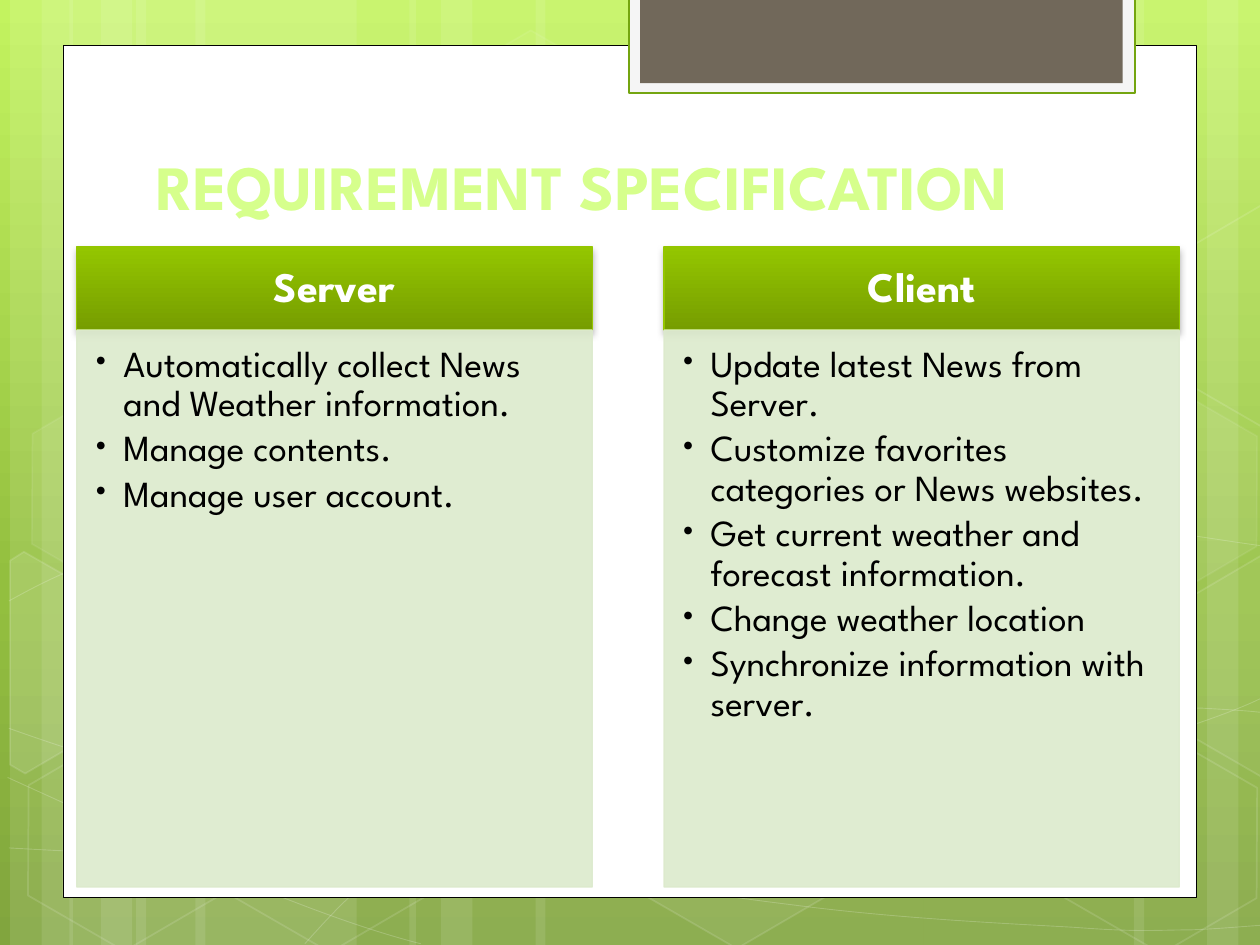
from typing import NamedTuple

from lxml import etree
from pptx import Presentation
from pptx.dml.color import RGBColor
from pptx.enum.shapes import MSO_SHAPE
from pptx.enum.text import MSO_ANCHOR, PP_ALIGN
from pptx.oxml.ns import qn
from pptx.util import Inches, Pt

RECTANGLE, HEXAGON = MSO_SHAPE.RECTANGLE, MSO_SHAPE.HEXAGON
TOP, MIDDLE = MSO_ANCHOR.TOP, MSO_ANCHOR.MIDDLE
LEFT, CENTER = PP_ALIGN.LEFT, PP_ALIGN.CENTER
FONT = "League Spartan"
WHITE, BLACK, GREEN = "FFFFFF", "000000", "94C600"
HEX_SIZE = (1.75, 1.52)


class Stroke(NamedTuple):
    color: str
    width: float
    opacity: int = 100


class Hexagon(NamedTuple):
    left: float
    top: float
    fill_opacity: int
    line_opacity: int


class Column(NamedTuple):
    left: float
    heading: str
    items: list[str]


# Background stripes: left, width
STRIPES = [(1.08, 1.75), (0.08, 0.5), (0.33, 0.83), (1.55, 1.75), (0.55, 0.5), (0.8, 0.83),
           (7.33, 1.75), (9.58, 0.5), (9, 0.83), (4.25, 3.08), (3.25, 0.5), (3.5, 0.83)]

# Background curves: a start point, then three points for each Bezier segment
CURVES = [
    [(0.07, 6.73), (0.61, 6.76), (1.15, 6.79), (1.9, 6.78), (2.65, 6.77), (3.58, 6.75),
     (4.58, 6.65), (5.58, 6.55), (7, 6.36), (7.92, 6.17), (8.83, 5.98), (9.77, 5.68),
     (10.07, 5.51)],
    [(0.07, 4.77), (0.36, 4.61), (0.65, 4.46), (1.21, 4.31), (1.78, 4.16), (2.59, 3.94),
     (3.47, 3.87), (4.36, 3.8), (5.44, 3.79), (6.54, 3.87), (7.64, 3.95), (9.47, 4.26),
     (10.07, 4.34)],
    [(0.06, 6.17), (1.27, 6.72), (2.47, 7.27), (3.34, 7.49)],
    [(0.07, 5.78), (0.38, 5.89), (0.7, 6), (1.28, 6.16), (1.86, 6.31), (2.73, 6.56),
     (3.57, 6.73), (4.4, 6.9), (5.45, 7.08), (6.28, 7.18), (7.11, 7.29), (8, 7.33),
     (8.53, 7.36), (9.05, 7.4), (9.19, 7.38), (9.45, 7.38), (9.71, 7.37), (9.89, 7.35),
     (10.07, 7.34)],
    [(2.42, 7.49), (2.6, 7.29), (2.78, 7.09), (3.02, 6.91), (3.26, 6.73), (3.6, 6.53),
     (3.88, 6.39), (4.16, 6.25), (4.33, 6.19), (4.7, 6.09), (5.06, 5.99), (5.73, 5.85),
     (6.08, 5.78), (6.44, 5.71), (6.49, 5.71), (6.8, 5.69), (7.11, 5.66), (7.6, 5.63),
     (7.94, 5.62), (8.29, 5.61), (8.86, 5.62), (8.86, 5.62), (9.08, 5.62), (9.31, 5.62),
     (9.53, 5.62), (9.71, 5.63), (9.88, 5.64), (9.97, 5.65), (10.06, 5.66), (10.03, 5.65),
     (10.06, 5.66)],
]

HEXAGONS = [Hexagon(3.34, 0.36, 4, 8), Hexagon(4.97, 5.89, 6, 12), Hexagon(0.11, 5.91, 0, 12),
            Hexagon(0.14, 3.12, 7, 8), Hexagon(1.74, 5.92, 0, 12), Hexagon(8.34, 5.93, 0, 12),
            Hexagon(8.34, 3.14, 7, 8)]

# Hexagons cut by the slide edge: corners, fill opacity
CUT_HEXAGONS = [
    ([(0.08, 4.45), (0.19, 4.38), (0.96, 4.82), (0.95, 5.7), (0.2, 6.14), (0.08, 6.07)], 10),
    ([(9.26, 4.85), (10.01, 4.41), (10.09, 4.46), (10.09, 6.13), (10.02, 6.17), (9.26, 5.73)], 4),
    ([(9.26, 2.07), (10.01, 1.63), (10.1, 1.68), (10.09, 3.35), (10.02, 3.39), (9.26, 2.95)], 0),
]

COLUMNS = [
    Column(0.61, "Server", ["Automatically collect News and Weather information.",
                            "Manage contents.", "Manage user account."]),
    Column(5.27, "Client", ["Update latest News from Server.",
                            "Customize favorites categories or News websites.",
                            "Get current weather and forecast information.",
                            "Change weather location",
                            "Synchronize information with server."]),
]


def rgb(color: str) -> RGBColor:
    return RGBColor.from_string(color)


def add_xml(parent, tag: str, **attributes):
    return etree.SubElement(parent, qn(tag), {k: str(v) for k, v in attributes.items()})


def set_opacity(properties, percent: int) -> None:
    if percent < 100:
        color = properties.find(qn("a:solidFill")).find(qn("a:srgbClr"))
        add_xml(color, "a:alpha", val=percent * 1000)


def style(shape, fill: str = "", opacity: int = 100, stroke: Stroke | None = None) -> None:
    shape.shadow.inherit = False
    properties = shape._element.spPr
    if fill and opacity:
        shape.fill.solid()
        shape.fill.fore_color.rgb = rgb(fill)
        set_opacity(properties, opacity)
    else:
        shape.fill.background()
    if stroke:
        shape.line.color.rgb = rgb(stroke.color)
        shape.line.width = Pt(stroke.width)
        set_opacity(properties.find(qn("a:ln")), stroke.opacity)
    else:
        shape.line.fill.background()


def set_gradient(fill, owner, stops: list[tuple[int, str]]) -> None:
    """Fill from top to bottom with stops of (percent, colour)."""
    fill.gradient()
    fill.gradient_angle = 270
    stop_list = next(owner.iter(qn("a:gsLst")))
    for old_stop in list(stop_list):
        stop_list.remove(old_stop)
    for percent, color in stops:
        add_xml(add_xml(stop_list, "a:gs", pos=percent * 1000), "a:srgbClr", val=color)


def add_box(slide, kind, left: float, top: float, width: float, height: float, **look):
    shape = slide.shapes.add_shape(kind, Inches(left), Inches(top), Inches(width), Inches(height))
    style(shape, **look)
    return shape


def add_outline(slide, points, closed: bool, **look):
    start, *others = [(Inches(x), Inches(y)) for x, y in points]
    builder = slide.shapes.build_freeform(*start)
    builder.add_line_segments(others, close=closed)
    outline = builder.convert_to_shape()
    style(outline, **look)
    return outline


def add_curve(slide, controls, stroke: Stroke) -> None:
    """Draw the control points as lines, then join each three into a Bezier segment."""
    curve = add_outline(slide, controls, False, stroke=stroke)
    lines = list(curve._element.iter(qn("a:lnTo")))
    trace = lines[0].getparent()
    for first in range(0, len(lines), 3):
        segment = add_xml(trace, "a:cubicBezTo")
        for line in lines[first:first + 3]:
            segment.append(line[0])
            trace.remove(line)


def write(shape, lines: list[str], size: float, color: str, bold: bool, align, anchor,
          insets: tuple[float, float, float, float], spacing: float = 1.0) -> None:
    frame = shape.text_frame
    frame.word_wrap = True
    frame.vertical_anchor = anchor
    frame.margin_left, frame.margin_top, frame.margin_right, frame.margin_bottom = map(
        Inches, insets)
    frame.text = "\n".join(lines)
    for paragraph in frame.paragraphs:
        paragraph.alignment = align
        paragraph.line_spacing = spacing
        font = paragraph.runs[0].font
        font.name, font.size, font.bold = FONT, Pt(size), bold
        font.color.rgb = rgb(color)


def add_column(slide, column: Column) -> None:
    heading = add_box(slide, RECTANGLE, column.left, 1.96, 4.09, 0.66, stroke=Stroke(GREEN, 0.75))
    set_gradient(heading.fill, heading._element, [(0, GREEN), (100, "769D00")])
    effects = heading._element.spPr.find(qn("a:effectLst"))
    shadow = add_xml(effects, "a:outerShdw", blurRad=Pt(4), dist=Pt(2), dir=90 * 60000)
    add_xml(add_xml(shadow, "a:srgbClr", val=BLACK), "a:alpha", val=28000)
    write(heading, [column.heading], 24, WHITE, True, CENTER, MIDDLE,
          (0.19, 0.11, 0.19, 0.11), 0.9)

    body = add_box(slide, RECTANGLE, column.left, 2.62, 4.09, 4.42, fill="DCEACC", opacity=90,
                   stroke=Stroke("DCEACC", 0.75, 90))
    write(body, column.items, 21, BLACK, False, LEFT, TOP, (0.12, 0.12, 0.16, 0.18), 0.9)
    for paragraph in body.text_frame.paragraphs:
        paragraph.space_after = Pt(3.15)
        properties = paragraph._p.get_or_add_pPr()
        properties.set("marL", str(Inches(0.25)))
        properties.set("indent", str(Inches(-0.25)))
        add_xml(properties, "a:buFont", typeface=FONT)
        add_xml(properties, "a:buChar", char="•")


def main() -> None:
    deck = Presentation()
    deck.slide_width, deck.slide_height = Inches(10), Inches(7.5)
    slide = deck.slides.add_slide(deck.slide_layouts[6])

    # Background
    set_gradient(slide.background.fill, slide._element,
                 [(0, "C3F35F"), (62, "93BF3F"), (100, "81A53E")])
    for left, width in STRIPES:
        add_box(slide, RECTANGLE, left, 0, width, 7.5, fill=WHITE, opacity=10)
    for controls in CURVES:
        add_curve(slide, controls, Stroke(WHITE, 0.5, 20))
    for item in HEXAGONS:
        hexagon = add_box(slide, HEXAGON, item.left, item.top, *HEX_SIZE, fill=WHITE,
                          opacity=item.fill_opacity, stroke=Stroke(WHITE, 1, item.line_opacity))
        hexagon.rotation = 30
        hexagon.adjustments[0] = 0.285
    for corners, opacity in CUT_HEXAGONS:
        add_outline(slide, corners, True, fill=WHITE, opacity=opacity,
                    stroke=Stroke(WHITE, 1, 12))

    # Page panel and top tab
    add_box(slide, RECTANGLE, 0.5, 0.36, 9, 6.76, fill=WHITE, stroke=Stroke(BLACK, 0.5))
    add_box(slide, RECTANGLE, 4.99, -0.02, 4.02, 0.76, fill="F5F5F5",
            stroke=Stroke("74A510", 1.25))
    add_box(slide, RECTANGLE, 5.08, -0.02, 3.83, 0.68, fill="71685A")

    # Title and columns
    title = slide.shapes.add_textbox(Inches(1.14), Inches(1.12), Inches(7.68), Inches(1.25))
    write(title, ["REQUIREMENT SPECIFICATION"], 36, "D6FF8C", True, LEFT, TOP,
          (0.1, 0.05, 0.1, 0.05))
    for column in COLUMNS:
        add_column(slide, column)

    deck.save("out.pptx")


if __name__ == "__main__":
    main()
